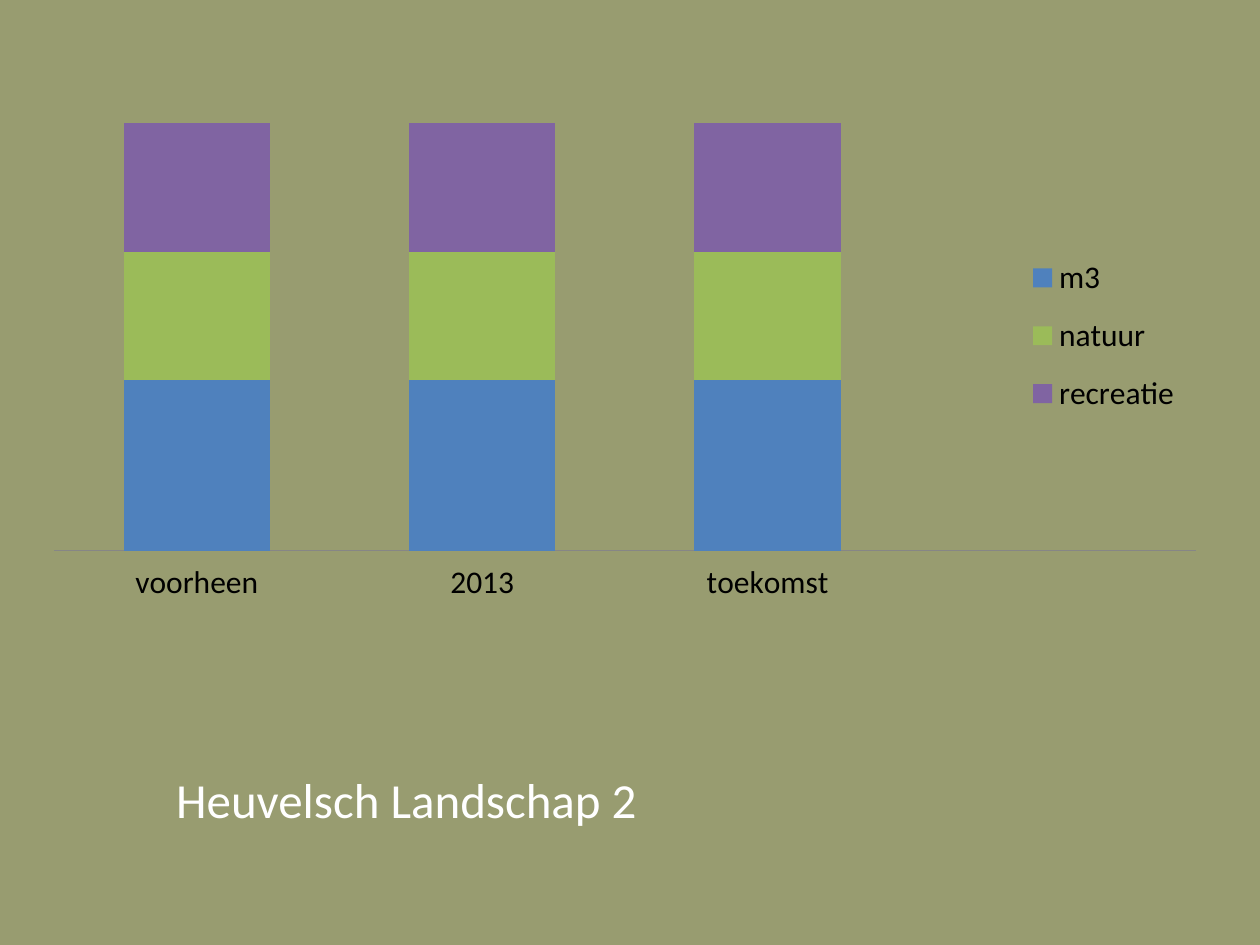
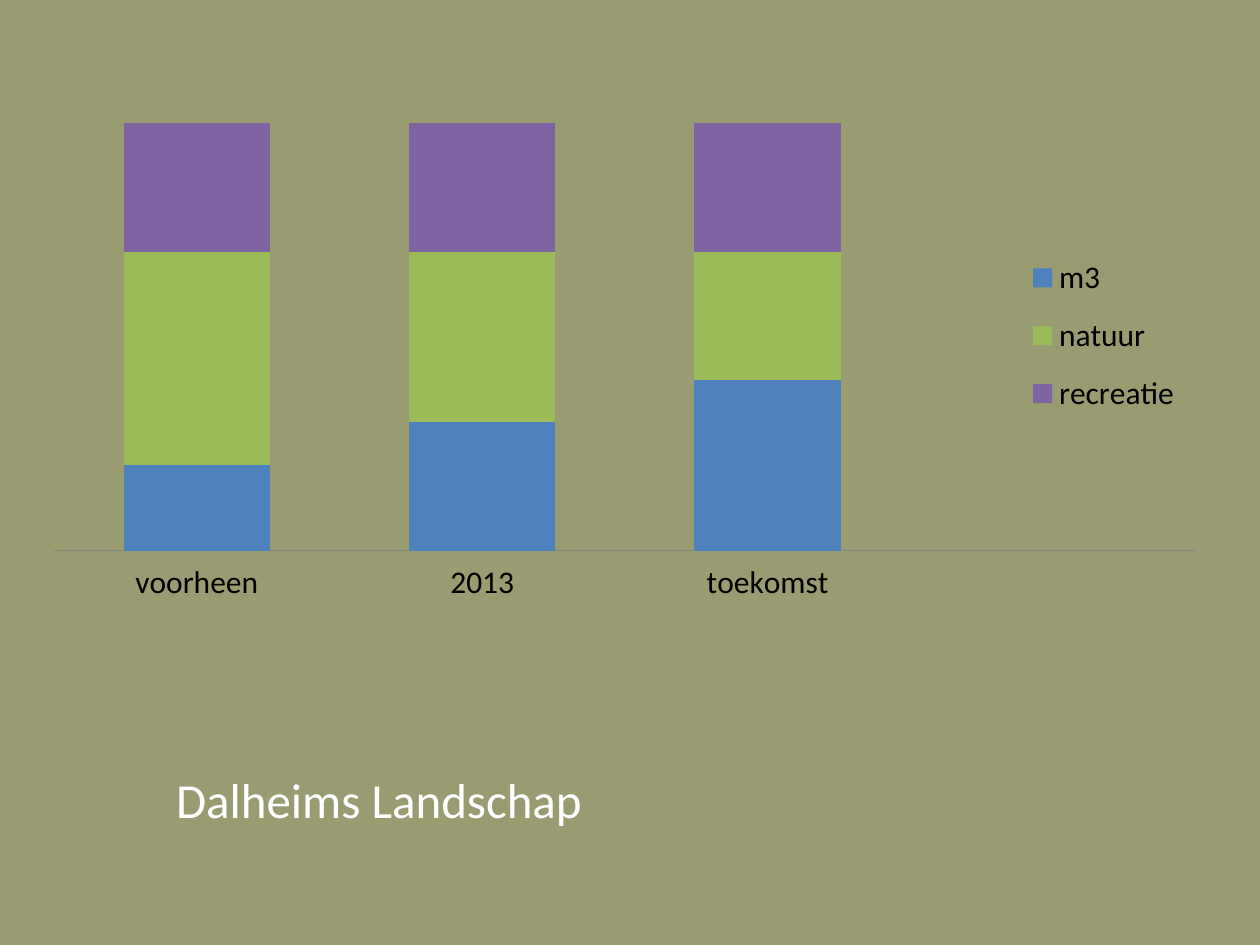
from pptx import Presentation
from pptx.chart.data import CategoryChartData
from pptx.dml.color import RGBColor
from pptx.enum.chart import XL_CHART_TYPE, XL_LEGEND_POSITION, XL_TICK_LABEL_POSITION, XL_TICK_MARK
from pptx.enum.text import MSO_AUTO_SIZE
from pptx.oxml import parse_xml
from pptx.oxml.ns import nsdecls, qn
from pptx.util import Inches, Pt

# Theme: colours and type sizes
theme = {
    "back": RGBColor.from_string("989C70"),
    "axis": RGBColor.from_string("868686"),
    "bars": [RGBColor.from_string(c) for c in ("4F81BD", "9BBB59", "8064A2")],
    "chart": {"name": "Calibri", "size": Pt(18)},
    "title": {"name": "Calibri", "size": Pt(28)},
    "black": RGBColor(0, 0, 0),
    "white": RGBColor(255, 255, 255),
}

# Content: the last category is left open for the legend
cats = ["voorheen", "2013", "toekomst", ""]
parts = ["m3", "natuur", "recreatie"]
pages = [
    ("Heuvelsch Landschap 2", [(40, 40, 40), (30, 30, 30), (30, 30, 30)]),
    ("Dalheims Landschap", [(20, 30, 40), (50, 40, 30), (30, 30, 30)]),
]

deck = Presentation()
deck.slide_width, deck.slide_height = Inches(10), Inches(7.5)
wide, high = deck.slide_width, deck.slide_height


def style(item, values):
    for key, value in values.items():
        setattr(item, key, value)


def place(node, index, box, inner=False):
    """Give a chart part a fixed place, in shares of the chart's size."""
    for old in node.findall(qn("c:layout")):
        node.remove(old)
    tags = '<c:layoutTarget val="inner"/>' if inner else ""
    tags += '<c:xMode val="edge"/><c:yMode val="edge"/>'
    tags += "".join(f'<c:{k} val="{v}"/>' for k, v in zip("xywh", box))
    node.insert(index, parse_xml(
        f'<c:layout {nsdecls("c")}><c:manualLayout>{tags}</c:manualLayout></c:layout>'))


for name, rows in pages:
    slide = deck.slides.add_slide(deck.slide_layouts[6])
    fill = slide.background.fill
    fill.solid()
    fill.fore_color.rgb = theme["back"]

    # Stacked columns
    data = CategoryChartData()
    data.categories = cats
    for part, row in zip(parts, rows):
        data.add_series(part, (*row, None))
    chart = slide.shapes.add_chart(
        XL_CHART_TYPE.COLUMN_STACKED_100, int(wide * 0.028), int(high * 0.048),
        int(wide * 0.937), int(high * 0.683), data).chart
    style(chart, {"has_title": False, "has_legend": True})
    style(chart.font, theme["chart"])
    chart.font.color.rgb = theme["black"]
    plot = chart.plots[0]
    style(plot, {"gap_width": 95, "overlap": 100, "vary_by_categories": False})
    for bar, color in zip(plot.series, theme["bars"]):
        bar.format.fill.solid()
        bar.format.fill.fore_color.rgb = color

    # Axes
    style(chart.value_axis, {"visible": False, "has_major_gridlines": False})
    style(chart.category_axis, {
        "major_tick_mark": XL_TICK_MARK.NONE,
        "minor_tick_mark": XL_TICK_MARK.NONE,
        "tick_label_position": XL_TICK_LABEL_POSITION.LOW,
    })
    line = chart.category_axis.format.line
    line.color.rgb = theme["axis"]
    line.width = Pt(0.75)

    # Plot and legend places
    style(chart.legend, {"position": XL_LEGEND_POSITION.TOP, "include_in_layout": False})
    place(chart.plots[0]._element.getparent(), 0, (0.016, 0.121, 0.967, 0.662), True)
    place(chart.legend._element, 1, (0.82, 0.3, 0.17, 0.3))

    # Title below the chart
    frame = slide.shapes.add_textbox(
        int(wide * 0.13), int(high * 0.815), int(wide * 0.669), int(high * 0.07)).text_frame
    style(frame, {"word_wrap": True, "auto_size": MSO_AUTO_SIZE.SHAPE_TO_FIT_TEXT})
    para = frame.paragraphs[0]
    style(para, {"text": name, "line_spacing": 0.9, "space_before": Pt(5.6)})
    font = para.runs[0].font
    style(font, theme["title"])
    font.color.rgb = theme["white"]

deck.save("out.pptx")
